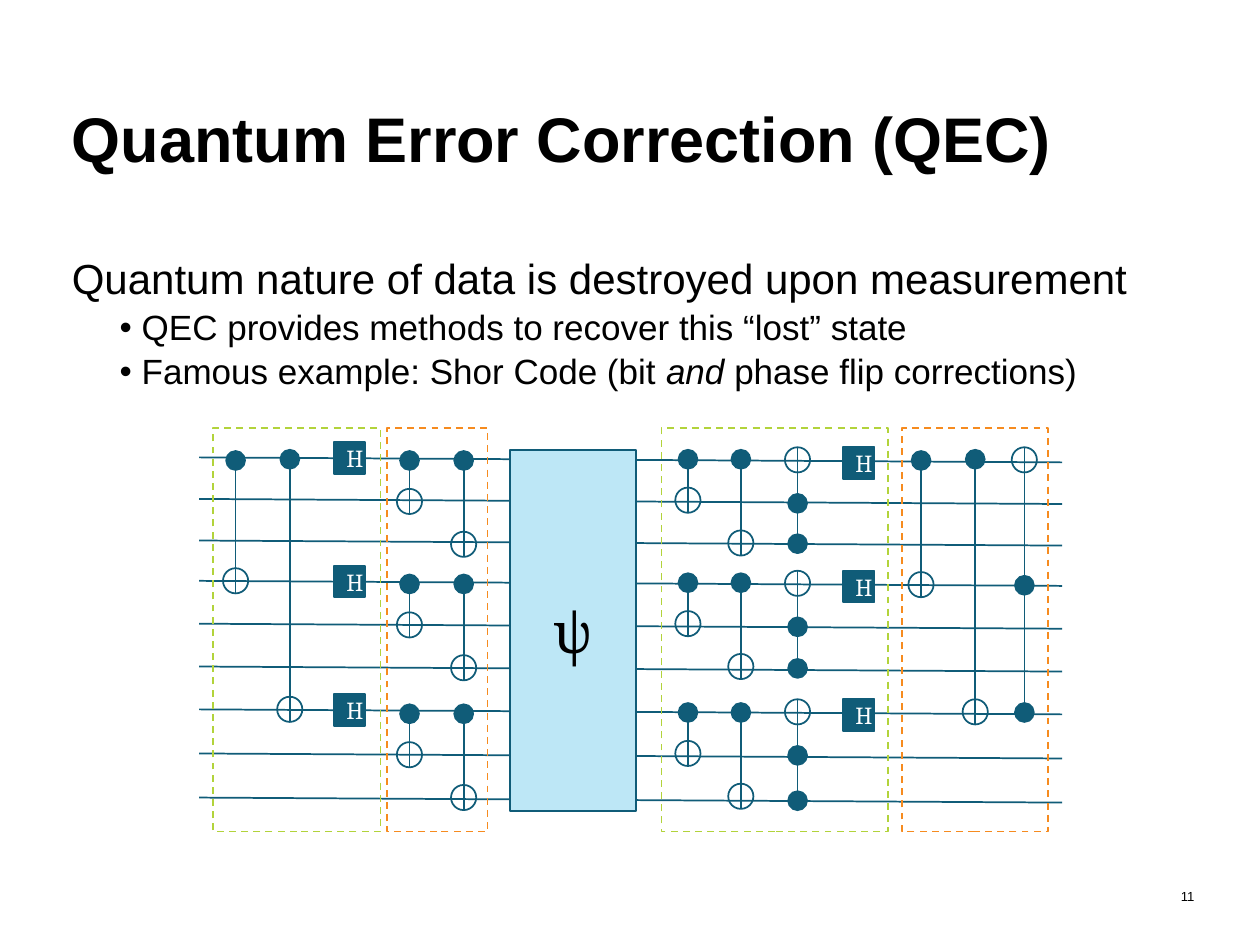
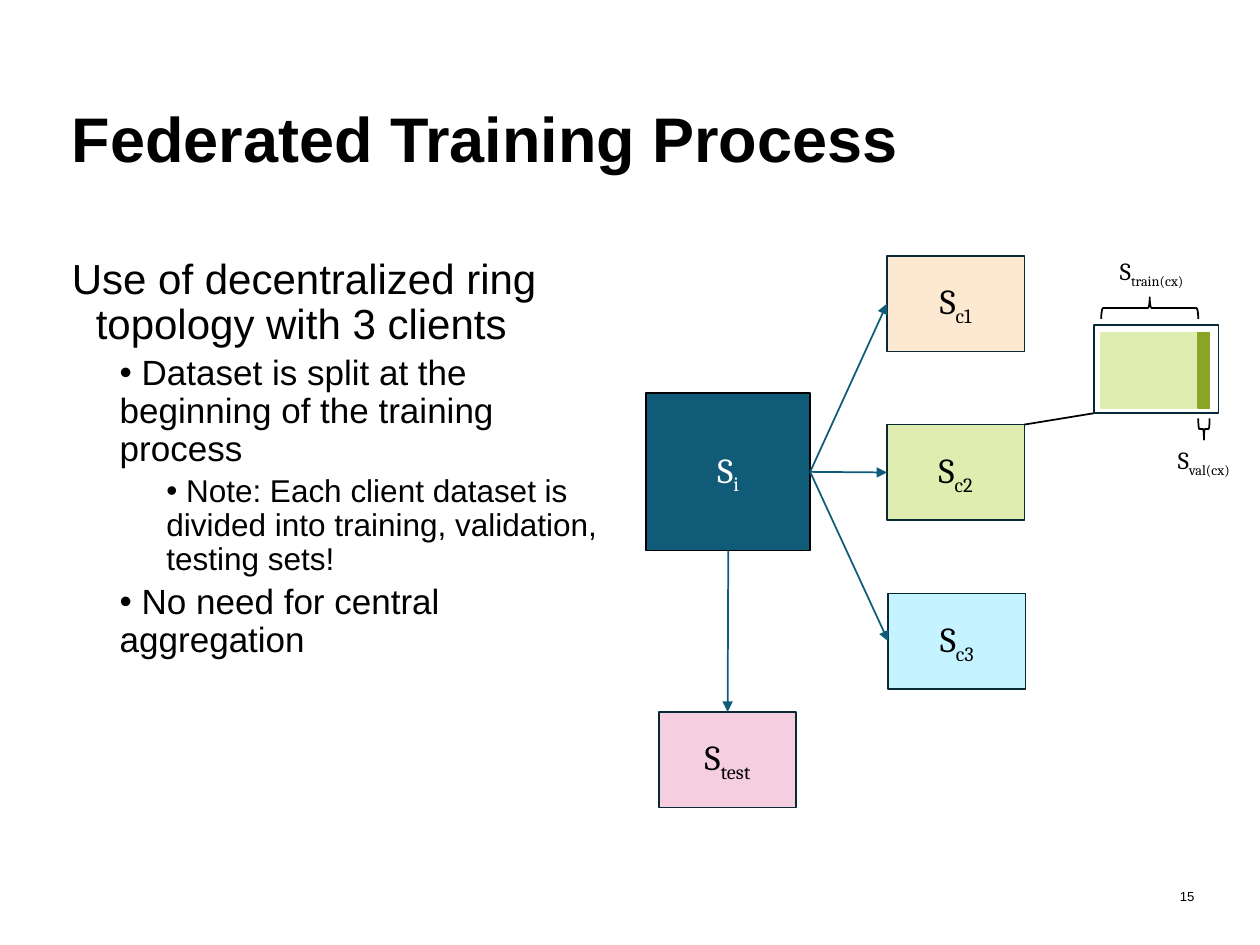
"""Build two slides: a Shor code circuit and a federated training diagram."""
from lxml import etree
from pptx import Presentation
from pptx.dml.color import RGBColor
from pptx.enum.dml import MSO_LINE
from pptx.enum.shapes import MSO_CONNECTOR, MSO_SHAPE
from pptx.enum.text import MSO_ANCHOR, MSO_AUTO_SIZE as FIT, PP_ALIGN
from pptx.oxml.ns import qn
from pptx.util import Pt

PX = 9144
COLORS = {
    "black": "000000", "white": "FFFFFF", "teal": "105C78", "navy": "072835",
    "sky": "BDE7F6", "green": "B2D33B", "orange": "F68B1F", "peach": "FDE8D2",
    "lime": "E0EDB1", "olive": "8AA525", "cyan": "C5F3FF", "pink": "F5CEE0",
}
SANS, SERIF = "Arial", "Cambria"
LEVELS = [
    {"size": 24, "left": 19, "indent": -19, "before": 7.5, "bullet": None},
    {"size": 20, "left": 38, "indent": 0, "before": 3.8, "bullet": "•"},
    {"size": 18, "left": 75, "indent": 0, "before": 3.8, "bullet": "•"},
]
DOT, TARGET = 15, 20


def emu(*lengths):
    """Turn px lengths into EMU."""
    return [round(v * PX) for v in lengths]


def rgb(name):
    """Look up a palette colour."""
    return RGBColor.from_string(COLORS[name])


def apply(obj, values):
    """Set attributes from a dict."""
    for key, value in values.items():
        setattr(obj, key, value)


def add_run(p, text, size, face=SANS, color="black", **fmt):
    """Add a formatted run to a paragraph."""
    r = p.add_run()
    r.text = text
    apply(r.font, {"size": Pt(size), "name": face, **fmt})
    r.font.color.rgb = rgb(color)
    return r


def place(sp, box):
    """Move and size a shape."""
    apply(sp, dict(zip(("left", "top", "width", "height"), emu(*box))))


def add_symbol(p, text, size, color="black", sub=""):
    """Write a serif symbol with an optional subscript."""
    add_run(p, text, size, SERIF, color)
    if sub:
        r = add_run(p, sub, size, SERIF, color)
        r.font._element.set("baseline", "-25000")


def add_box(shapes, box, fill=None, line="teal", kind=MSO_SHAPE.RECTANGLE, dash=None):
    """Add a preset shape with a thin outline."""
    sp = shapes.add_shape(kind, *emu(*box))
    sp.shadow.inherit = False
    if fill:
        sp.fill.solid()
        sp.fill.fore_color.rgb = rgb(fill)
    else:
        sp.fill.background()
    sp.line.color.rgb = rgb(line)
    apply(sp.line, {"width": Pt(1), "dash_style": dash})
    return sp


def add_symbol_box(shapes, box, fill, line, text, size, color="black", sub=""):
    """Add a box with a centred symbol."""
    sp = add_box(shapes, box, fill, line)
    p = sp.text_frame.paragraphs[0]
    p.alignment = PP_ALIGN.CENTER
    add_symbol(p, text, size, color, sub)
    return sp


def add_line(shapes, x1, y1, x2, y2, color="teal", arrow=False):
    """Add a straight connector, optionally with an arrowhead."""
    cn = shapes.add_connector(MSO_CONNECTOR.STRAIGHT, *emu(x1, y1, x2, y2))
    cn.line.color.rgb = rgb(color)
    cn.line.width = Pt(1)
    if arrow:
        etree.SubElement(cn.line._get_or_add_ln(), qn("a:tailEnd"), type="triangle")
    etree.SubElement(cn._element.spPr, qn("a:effectLst"))
    return cn


def join(shapes, start, start_side, end, end_side):
    """Draw an arrow between the side middles of two boxes."""
    cn = add_line(shapes, 0, 0, 0, 0, arrow=True)
    cn.begin_connect(start, start_side)
    cn.end_connect(end, end_side)


def add_gate(shapes, x, dots, target):
    """Draw a controlled NOT: control dots, a target ring and their line."""
    for y in dots:
        add_box(shapes, (x - DOT / 2, y, DOT, DOT), "teal", kind=MSO_SHAPE.OVAL)
    add_box(shapes, (x - TARGET / 2, target, TARGET, TARGET), kind=MSO_SHAPE.OVAL)
    bottom = max(target + TARGET, max(dots) + DOT)
    add_line(shapes, x, min(target, *dots), x, bottom)


def add_item(p, level, runs, first):
    """Fill one body paragraph; runs are (text, italic) pairs."""
    style = LEVELS[level]
    pPr = p._p.get_or_add_pPr()
    left, indent = emu(style["left"], style["indent"])
    pPr.set("marL", str(left))
    pPr.set("indent", str(indent))
    if style["bullet"]:
        etree.SubElement(pPr, qn("a:buChar"), char=style["bullet"])
    else:
        etree.SubElement(pPr, qn("a:buNone"))
    apply(p, {"level": level, "line_spacing": 0.9, "alignment": PP_ALIGN.LEFT,
              "space_before": Pt(0 if first else style["before"])})
    for text, italic in runs:
        add_run(p, text, style["size"], italic=italic)


def add_slide(prs, title, body_width, items, number):
    """Add a slide with title, outline and page number."""
    s = prs.slides.add_slide(prs.slide_layouts[1])
    head, body = s.placeholders
    place(head, (47, 40, 906, 145))
    place(body, (47, 200, body_width, 460))
    for sp, anchor in ((head, MSO_ANCHOR.MIDDLE), (body, MSO_ANCHOR.TOP)):
        apply(sp.text_frame, {"auto_size": FIT.NONE, "vertical_anchor": anchor})
    p = head.text_frame.paragraphs[0]
    apply(p, {"alignment": PP_ALIGN.LEFT, "line_spacing": 0.9})
    add_run(p, title, 36, bold=True)

    tf = body.text_frame
    for i, (level, runs) in enumerate(items):
        add_item(tf.add_paragraph() if i else tf.paragraphs[0], level, runs, i == 0)

    tf = s.shapes.add_textbox(*emu(918, 691, 35, 40)).text_frame
    apply(tf, {"word_wrap": True, "vertical_anchor": MSO_ANCHOR.MIDDLE,
               "margin_left": 0, "margin_top": 0, "margin_bottom": 0,
               "margin_right": 5 * PX})
    p = tf.paragraphs[0]
    p.alignment = PP_ALIGN.RIGHT
    add_run(p, str(number), 7.5)
    return s


def add_circuit(s):
    """Draw the nine-qubit Shor code as one group."""
    shapes = s.shapes.add_group_shape().shapes
    for y in (363, 396, 429, 461, 495, 529, 563, 598, 633):
        add_line(shapes, 843, y + 4, 158, y)

    for x, dot, target in ((187, 358, 451), (230, 357, 553),
                           (731, 358, 454), (774, 357, 555)):
        add_gate(shapes, x, [dot], target)
    for columns, tops in (((325, 368), (358, 456, 559)), ((546, 588), (357, 455, 558))):
        for top in tops:
            for x, drop in zip(columns, (30, 64)):
                add_gate(shapes, x, [top], top + drop)
    for x, dots, target in ((633, (392, 424), 355), (633, (490, 523), 453),
                            (633, (592, 628), 555), (813, (457, 558), 355)):
        add_gate(shapes, x, dots, target)

    for x, tops in ((265, (351, 449, 551)), (669, (355, 453, 555))):
        for y in tops:
            add_symbol_box(shapes, (x, y, 25, 25), "teal", "teal", "H", 14, "white")
    add_symbol_box(shapes, (405, 357, 100, 287), "sky", "teal", "ψ", 32)

    for x, width, color in ((169, 133, "green"), (307, 80, "orange"),
                            (525, 180, "green"), (716, 116, "orange")):
        add_box(shapes, (x, 340, width, 320), line=color, dash=MSO_LINE.DASH)


def add_brace(shapes, box, rotation):
    """Add a rotated brace around a part of the data set."""
    add_box(shapes, box, line="black", kind=MSO_SHAPE.RIGHT_BRACE).rotation = rotation


def add_label(shapes, box, sub):
    """Add a non-wrapping set label."""
    tf = shapes.add_textbox(*emu(*box)).text_frame
    apply(tf, {"word_wrap": False, "auto_size": FIT.SHAPE_TO_FIT_TEXT})
    add_symbol(tf.paragraphs[0], "S", 14, sub=sub)


def add_split(s):
    """Draw the data set split between clients and the test set."""
    shapes = s.shapes
    source = add_symbol_box(shapes, (513, 312, 130, 125), "teal", "black",
                            "S", 20, "white", "i")
    clients = [add_symbol_box(shapes, (x, 203 + 134 * i, 109, 76), fill, "navy",
                              "S", 20, sub=f"c{i + 1}")
               for i, (x, fill) in enumerate(((704, "peach"), (704, "lime"), (705, "cyan")))]
    test = add_symbol_box(shapes, (523, 565, 109, 76), "pink", "navy", "S", 20, sub="test")
    join(shapes, source, 2, test, 0)
    for client in clients:
        join(shapes, source, 3, client, 1)

    add_box(shapes, (874, 264, 77, 60), "lime", "lime")
    add_box(shapes, (951, 264, 9, 60), "olive", "olive")
    add_box(shapes, (868, 258, 99, 70), line="navy")
    add_line(shapes, 813, 337, 868, 328, "black")
    add_brace(shapes, (904, 206, 17, 77), 270)
    add_brace(shapes, (947, 336, 17, 9), 90)
    add_label(shapes, (879, 198, 80, 34), "train(cx)")
    add_label(shapes, (925, 348, 69, 34), "val(cx)")


def main():
    """Build and save the presentation."""
    prs = Presentation()
    prs.slide_width, prs.slide_height = emu(1000, 750)
    add_circuit(add_slide(prs, "Quantum Error Correction (QEC)", 906, [
        (0, [("Quantum nature of data is destroyed upon measurement", False)]),
        (1, [(" QEC provides methods to recover this “lost” state", False)]),
        (1, [(" Famous example: Shor Code (bit ", False), ("and", True),
             (" phase flip corrections)", False)]),
    ], 11))
    add_split(add_slide(prs, "Federated Training Process", 453, [
        (0, [("Use of decentralized ring topology with 3 clients", False)]),
        (1, [(" Dataset is split at the beginning of the training process", False)]),
        (2, [(" Note: Each client dataset is divided into training, validation, "
              "testing sets!", False)]),
        (1, [(" No need for central aggregation", False)]),
    ], 15))
    prs.save("out.pptx")


if __name__ == "__main__":
    main()
